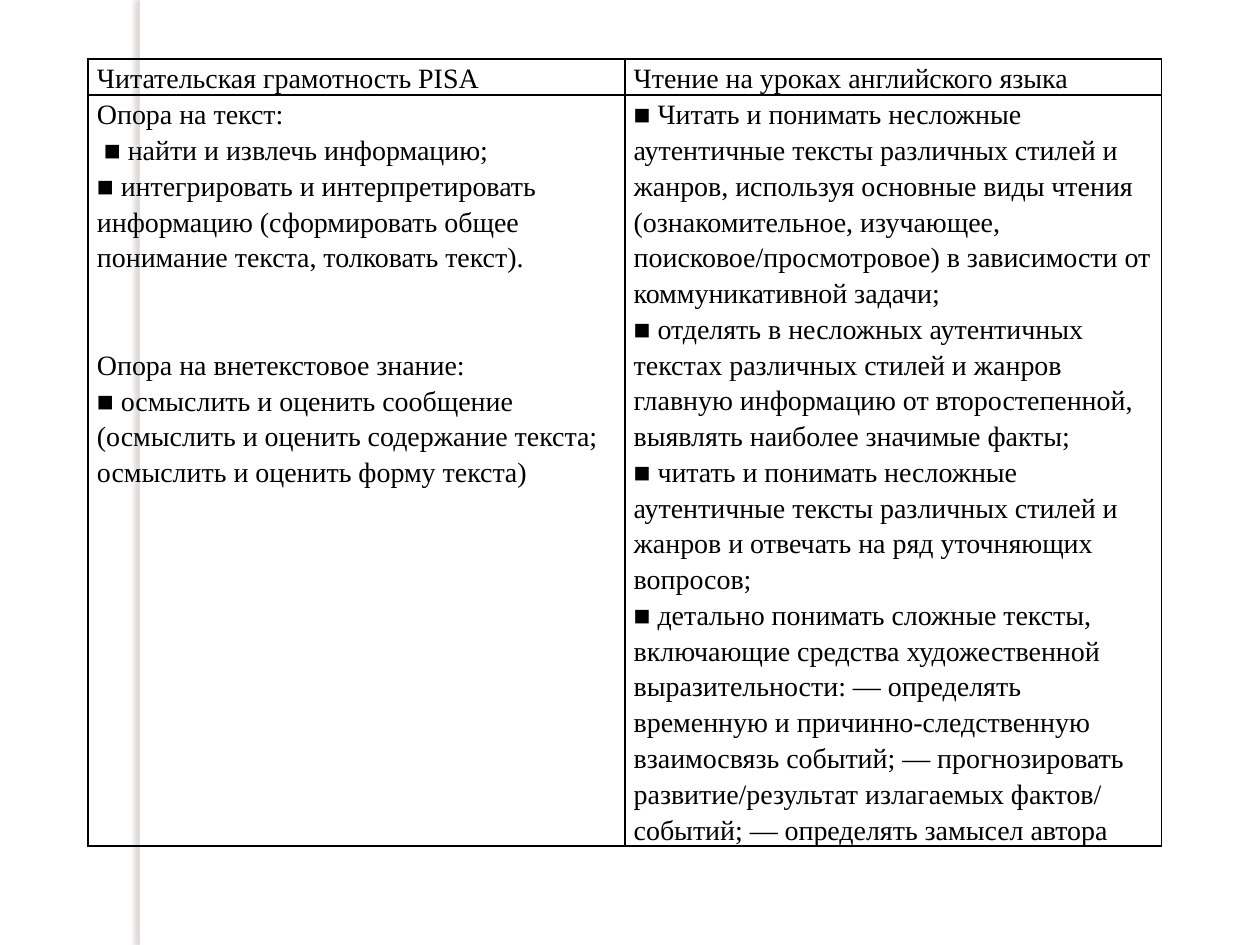
from lxml import etree
from pptx import Presentation
from pptx.dml.color import RGBColor
from pptx.enum import shapes
from pptx.oxml.ns import qn
from pptx.util import Inches, Pt

BLACK = RGBColor(0x00, 0x00, 0x00)
WHITE = RGBColor(0xFF, 0xFF, 0xFF)
SHADOW = RGBColor(0x73, 0x6F, 0x63)
FONT = "Times New Roman"
SECTION_GAP = Pt(41)  # two text lines

COLUMN_WIDTH = 4.26
ROW_HEIGHTS = (0.28, 5.96)
OUTSIDE_TEXT = "Опора на внетекстовое знание:"
ROWS = [
    [
        ["Читательская грамотность PISA"],
        ["Чтение на уроках английского языка"],
    ],
    [
        [
            "Опора на текст:",
            " ■ найти и извлечь информацию;",
            "■ интегрировать и интерпретировать информацию (сформировать общее "
            "понимание текста, толковать текст).",
            OUTSIDE_TEXT,
            "■ осмыслить и оценить сообщение (осмыслить и оценить содержание текста; "
            "осмыслить и оценить форму текста)",
        ],
        [
            "■ Читать и понимать несложные аутентичные тексты различных стилей и жанров, "
            "используя основные виды чтения (ознакомительное, изучающее, "
            "поисковое/просмотровое) в зависимости от коммуникативной задачи;",
            "■ отделять в несложных аутентичных текстах различных стилей и жанров главную "
            "информацию от второстепенной, выявлять наиболее значимые факты;",
            "■ читать и понимать несложные аутентичные тексты различных стилей и жанров "
            "и отвечать на ряд уточняющих вопросов;",
            "■ детально понимать сложные тексты, включающие средства художественной "
            "выразительности: — определять временную и причинно-следственную взаимосвязь "
            "событий; — прогнозировать развитие/результат излагаемых фактов/ событий; "
            "— определять замысел автора",
        ],
    ],
]


def add_color(parent, color):
    return etree.SubElement(parent, qn("a:srgbClr"), val=str(color))


def add_side_bar(slide):
    """Add the white vertical bar that casts a soft shadow to the left."""
    bar = slide.shapes.add_shape(
        shapes.MSO_SHAPE.RECTANGLE, Inches(1.11), 0, Inches(0.08), Inches(7.5)
    )
    bar.fill.solid()
    bar.fill.fore_color.rgb = WHITE
    bar.line.fill.background()
    bar.shadow.inherit = False
    effects = bar._element.spPr.find(qn("a:effectLst"))
    shadow = etree.SubElement(
        effects, qn("a:outerShdw"), blurRad=str(Pt(3)), dist=str(Pt(3)),
        dir=str(180 * 60000), algn="tl", rotWithShape="0",
    )
    etree.SubElement(add_color(shadow, SHADOW), qn("a:alpha"), val="25000")


def set_borders(cell):
    properties = cell._tc.get_or_add_tcPr()
    for side in ("lnL", "lnR", "lnT", "lnB"):
        line = etree.SubElement(properties, qn(f"a:{side}"), w=str(Pt(1)))
        add_color(etree.SubElement(line, qn("a:solidFill")), BLACK)


def fill_cell(cell, lines):
    set_borders(cell)
    cell.fill.background()
    cell.margin_left = cell.margin_right = Inches(0.07)
    cell.margin_top = cell.margin_bottom = 0
    cell.text_frame.text = "\n".join(lines)
    for paragraph in cell.text_frame.paragraphs:
        paragraph.line_spacing = 1.15
        if paragraph.text == OUTSIDE_TEXT:
            paragraph.space_before = SECTION_GAP
        for run in paragraph.runs:
            run.font.name = FONT
            run.font.size = Pt(16)
            run.font.color.rgb = BLACK


def add_comparison_table(slide):
    frame = slide.shapes.add_table(
        len(ROWS), 2, Inches(0.7), Inches(0.47),
        Inches(2 * COLUMN_WIDTH), Inches(sum(ROW_HEIGHTS)),
    )
    table = frame.table
    table.first_row = table.horz_banding = False
    for column in table.columns:
        column.width = Inches(COLUMN_WIDTH)
    for row, height, contents in zip(table.rows, ROW_HEIGHTS, ROWS):
        row.height = Inches(height)
        for cell, lines in zip(row.cells, contents):
            fill_cell(cell, lines)


def main():
    presentation = Presentation()
    presentation.slide_width = Inches(10)
    presentation.slide_height = Inches(7.5)
    slide = presentation.slides.add_slide(presentation.slide_layouts[6])
    add_side_bar(slide)
    add_comparison_table(slide)
    presentation.save("out.pptx")


if __name__ == "__main__":
    main()
